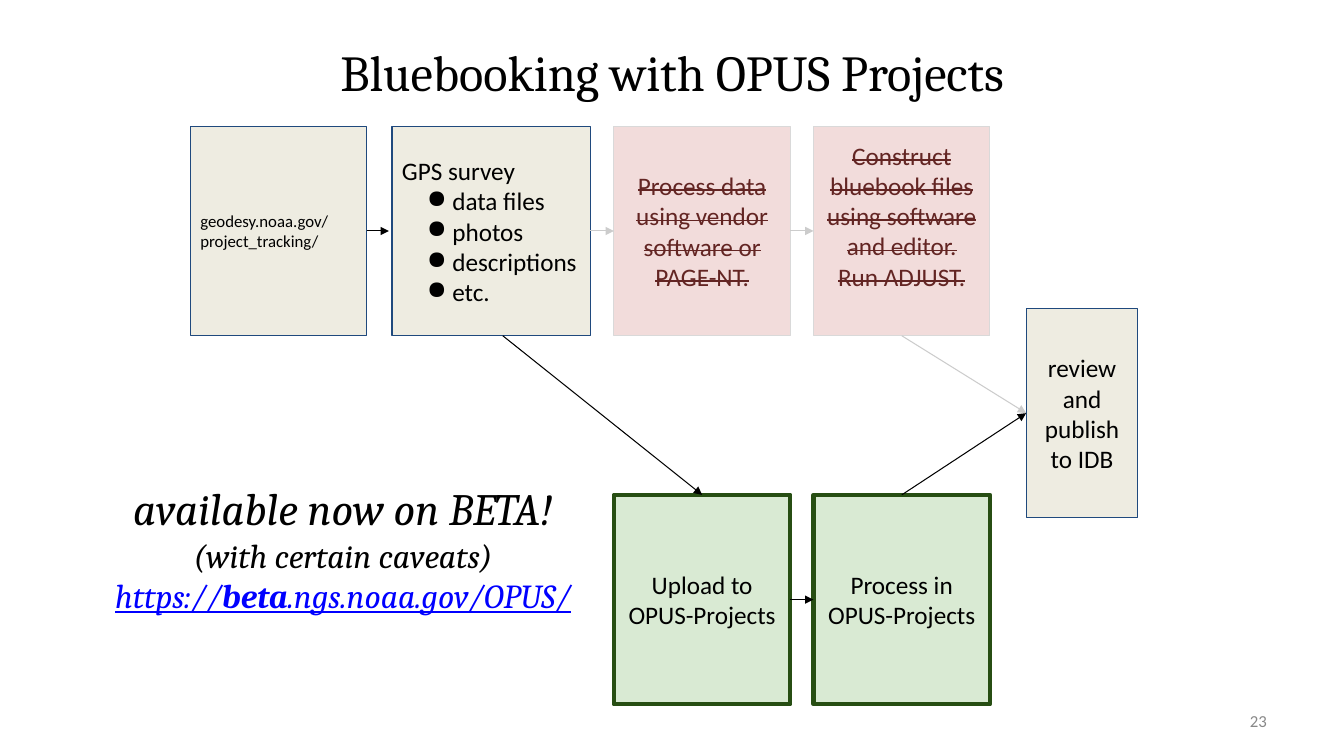
import pptx
import pptx.util
import pptx.dml.color
import pptx.enum.shapes
import pptx.enum.text
from lxml import etree
from pptx.oxml.ns import qn

Cm = pptx.util.Cm
Pt = pptx.util.Pt
RGBColor = pptx.dml.color.RGBColor
ALIGN = pptx.enum.text.PP_ALIGN
ANCHOR = pptx.enum.text.MSO_ANCHOR

BLACK = RGBColor(0x00, 0x00, 0x00)
BEIGE = RGBColor(0xEE, 0xEC, 0xE1)
NAVY = RGBColor(0x1F, 0x49, 0x7D)
LIGHT_GREEN = RGBColor(0xD9, 0xEA, 0xD3)
DARK_GREEN = RGBColor(0x27, 0x4E, 0x13)
PINK = RGBColor(0xF2, 0xDC, 0xDB)
PALE_GREY = RGBColor(0xD9, 0xD9, 0xD9)
MAROON = RGBColor(0x63, 0x25, 0x23)
ARROW_GREY = RGBColor(0xCC, 0xCC, 0xCC)
NUMBER_GREY = RGBColor(0x88, 0x88, 0x88)
LINK_BLUE = RGBColor(0x00, 0x00, 0xFF)

# Box styles: fill, outline, outline width, text colour, struck through
KEPT = (BEIGE, NAVY, 0.75, BLACK, False)
DROPPED = (PINK, PALE_GREY, 0.75, MAROON, True)
NEW = (LIGHT_GREEN, DARK_GREEN, 3, BLACK, False)

# Flow grid, in cm
BOX_W, BOX_H = 4.45, 5.28
TOP_ROW, BOTTOM_ROW = 3.18, 12.47
TRACKING_X, SURVEY_X, THIRD_X, FOURTH_X, REVIEW_X = 4.8, 9.88, 15.47, 20.5, 25.86
TOP, LEFT, BOTTOM, RIGHT = range(4)


class FlowSlide:
    body_font = "Calibri"
    title_font = "Cambria"

    def __init__(self, slide):
        self.shapes = slide.shapes

    def run(self, paragraph, text, size, color, font, strike=False, **flags):
        run = paragraph.add_run()
        run.text = text
        run.font.name = font
        run.font.size = Pt(size)
        run.font.color.rgb = color
        for flag, value in flags.items():
            setattr(run.font, flag, value)
        if strike:
            run._r.get_or_add_rPr().set("strike", "sngStrike")

    def paragraph(self, frame, first, align):
        paragraph = frame.paragraphs[0] if first else frame.add_paragraph()
        paragraph.alignment = align
        return paragraph

    def bullet(self, paragraph):
        props = paragraph._p.get_or_add_pPr()
        props.set("marL", str(Cm(1.27)))
        props.set("indent", str(Cm(-0.64)))
        etree.SubElement(props, qn("a:buChar")).set("char", "●")

    def box(self, x, y, lines, style, width=BOX_W, size=18, align=ALIGN.CENTER,
            bulleted=False, bottom_inset=0.25):
        fill, outline, weight, color, strike = style
        box = self.shapes.add_shape(pptx.enum.shapes.MSO_SHAPE.RECTANGLE,
                                    Cm(x), Cm(y), Cm(width), Cm(BOX_H))
        box.shadow.inherit = False
        box.fill.solid()
        box.fill.fore_color.rgb = fill
        box.line.color.rgb = outline
        box.line.width = Pt(weight)
        frame = box.text_frame
        frame.word_wrap = True
        frame.vertical_anchor = ANCHOR.MIDDLE
        frame.margin_left = frame.margin_right = frame.margin_top = Cm(0.25)
        frame.margin_bottom = Cm(bottom_inset)
        for index, line in enumerate(lines):
            paragraph = self.paragraph(frame, index == 0, align)
            if bulleted and index:
                self.bullet(paragraph)
            self.run(paragraph, line, size, color, self.body_font, strike)
        return box

    def arrow(self, start, end, color=BLACK):
        """Each end is a (box, side) pair or an (x, y) point in cm."""
        joined = [not isinstance(point[0], (int, float)) for point in (start, end)]
        coords = [Cm(0) if is_box else Cm(value)
                  for point, is_box in zip((start, end), joined) for value in point]
        arrow = self.shapes.add_connector(
            pptx.enum.shapes.MSO_CONNECTOR.STRAIGHT, *coords)
        if joined[0]:
            arrow.begin_connect(*start)
        if joined[1]:
            arrow.end_connect(*end)
        arrow.line.color.rgb = color
        arrow.line.width = Pt(0.75)
        etree.SubElement(arrow.line._get_or_add_ln(), qn("a:tailEnd")).set("type", "triangle")
        etree.SubElement(arrow._element.spPr, qn("a:effectLst"))

    def text(self, x, y, width, height, lines, align=ALIGN.CENTER, anchor=ANCHOR.TOP):
        """Each line is a list of (text, size, colour, font, flags) runs."""
        frame = self.shapes.add_textbox(Cm(x), Cm(y), Cm(width), Cm(height)).text_frame
        frame.word_wrap = True
        frame.vertical_anchor = anchor
        for index, runs in enumerate(lines):
            paragraph = self.paragraph(frame, index == 0, align)
            for text, size, color, font, flags in runs:
                self.run(paragraph, text, size, color, font, **flags)


def main():
    deck = pptx.Presentation()
    deck.slide_width, deck.slide_height = Cm(33.87), Cm(19.05)
    flow = FlowSlide(deck.slides.add_slide(deck.slide_layouts[6]))
    serif = flow.title_font

    # Title
    flow.text(4.24, 0.91, 25.4, 2.21,
              [[("Bluebooking with OPUS Projects", 36, BLACK, serif, {})]])

    # Top row: survey steps, then the steps no longer needed
    tracking = flow.box(TRACKING_X, TOP_ROW, ["geodesy.noaa.gov/ project_tracking/"],
                        KEPT, size=12, align=ALIGN.LEFT)
    survey = flow.box(SURVEY_X, TOP_ROW,
                      ["GPS survey", "data files", "photos", "descriptions", "etc."],
                      KEPT, width=5, align=ALIGN.LEFT, bulleted=True)
    vendor = flow.box(THIRD_X, TOP_ROW,
                      ["Process data using vendor software or PAGE-NT."], DROPPED)
    bluebook = flow.box(FOURTH_X, TOP_ROW,
                        ["Construct bluebook files using software and editor.",
                         "Run ADJUST."], DROPPED, bottom_inset=1.02)

    # Bottom row and final review
    upload = flow.box(THIRD_X, BOTTOM_ROW, ["Upload to OPUS-Projects"], NEW)
    process = flow.box(FOURTH_X, BOTTOM_ROW, ["Process in OPUS-Projects"], NEW)
    review = flow.box(REVIEW_X, 7.77, ["review and publish to IDB"], KEPT, width=2.82)

    # Current path
    flow.arrow((tracking, RIGHT), (9.8, TOP_ROW + BOX_H / 2))
    flow.arrow((12.67, TOP_ROW + BOX_H), (upload, TOP))
    flow.arrow((upload, RIGHT), (process, LEFT))
    flow.arrow((process, TOP), (review, LEFT))

    # Former path
    flow.arrow((survey, RIGHT), (vendor, LEFT), ARROW_GREY)
    flow.arrow((vendor, RIGHT), (bluebook, LEFT), ARROW_GREY)
    flow.arrow((bluebook, BOTTOM), (review, LEFT), ARROW_GREY)

    # Beta notice
    italic = {"italic": True}
    link = {"italic": True, "underline": True}
    flow.text(1.8, 11.99, 13.69, 3.89, [
        [("available now on BETA!", 32, BLACK, serif, italic)],
        [("(with certain caveats)", 24, BLACK, serif, italic)],
        [("https://", 24, LINK_BLUE, serif, link),
         ("beta", 24, LINK_BLUE, serif, {**link, "bold": True}),
         (".ngs.noaa.gov/OPUS/", 24, LINK_BLUE, serif, link)],
    ])

    # Slide number
    flow.text(24.28, 17.65, 7.9, 1.02,
              [[("23", 12, NUMBER_GREY, flow.body_font, {})]],
              ALIGN.RIGHT, ANCHOR.MIDDLE)

    deck.save("out.pptx")


if __name__ == "__main__":
    main()
